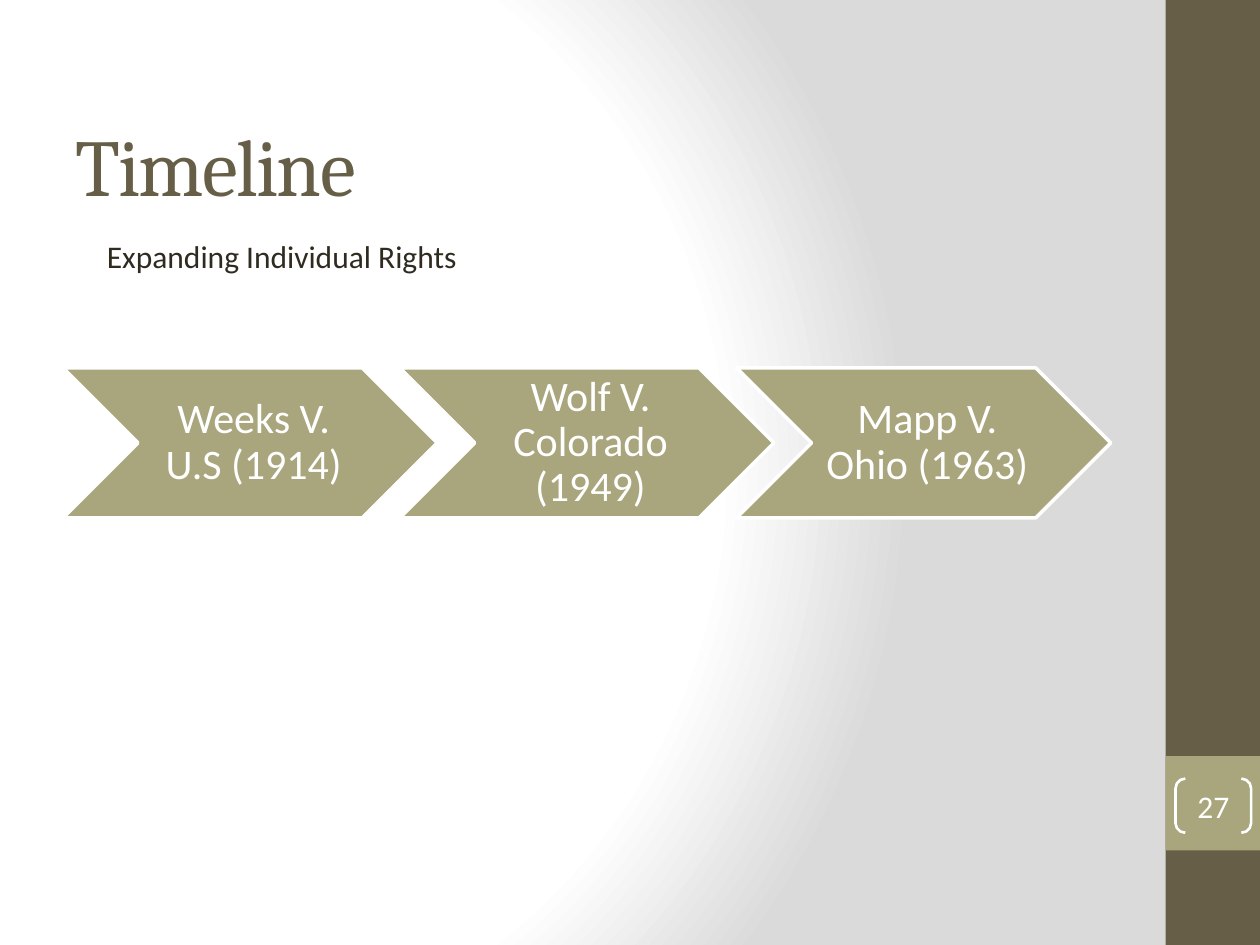
from dataclasses import dataclass

from pptx import Presentation
from pptx.dml.color import RGBColor
from pptx.enum.shapes import MSO_SHAPE
from pptx.enum.text import MSO_ANCHOR, PP_ALIGN
from pptx.oxml import parse_xml
from pptx.oxml.ns import nsdecls
from pptx.util import Inches, Pt

COLS, ROWS = 40, 30
WIDTH, HEIGHT = Inches(10), Inches(7.5)
BROWN, OLIVE, INK, WHITE = "675E47", "A9A57C", "2F2B20", "FFFFFF"


@dataclass
class Box:
    """Place on the slide, in columns and rows of the grid."""
    col: float
    row: float
    cols: float
    rows: float

    def emu(self) -> tuple[int, ...]:
        return (round(self.col * WIDTH / COLS), round(self.row * HEIGHT / ROWS),
                round(self.cols * WIDTH / COLS), round(self.rows * HEIGHT / ROWS))


@dataclass
class Style:
    size: float
    color: str
    font: str = "Calibri"
    align: PP_ALIGN = PP_ALIGN.LEFT
    line_spacing: float = 1.0
    insets: tuple[float, ...] = (0.1, 0.05, 0.1, 0.05)


def rgb(color: str) -> RGBColor:
    return RGBColor.from_string(color)


def set_background(s) -> None:
    stops = "".join(f'<a:gs pos="{pos}000"><a:srgbClr val="{color}"/></a:gs>'
                    for pos, color in ((0, WHITE), (75, WHITE), (100, "DADADA")))
    s.element.cSld.insert(0, parse_xml(
        f'<p:bg {nsdecls("p", "a")}><p:bgPr><a:gradFill rotWithShape="1">'
        f'<a:gsLst>{stops}</a:gsLst><a:path path="circle">'
        '<a:fillToRect l="20000" t="50000" r="100000" b="50000"/></a:path>'
        '</a:gradFill><a:effectLst/></p:bgPr></p:bg>'))


def add_shape(s, kind: MSO_SHAPE, box: Box, fill: str = "", line_width: float = 0):
    sp = s.shapes.add_shape(kind, *box.emu())
    sp.shadow.inherit = False
    if fill:
        sp.fill.solid()
        sp.fill.fore_color.rgb = rgb(fill)
    else:
        sp.fill.background()
    if line_width:
        sp.line.color.rgb = rgb(WHITE)
        sp.line.width = Pt(line_width)
    else:
        sp.line.fill.background()
    return sp


def write(sp, text: str, style: Style):
    tf = sp.text_frame
    tf.word_wrap = True
    tf.vertical_anchor = MSO_ANCHOR.MIDDLE
    tf.margin_left, tf.margin_top, tf.margin_right, tf.margin_bottom = map(
        Inches, style.insets)
    p = tf.paragraphs[0]
    p.alignment = style.align
    p.line_spacing = style.line_spacing
    r = p.add_run()
    r.text = text
    r.font.name = style.font
    r.font.size = Pt(style.size)
    r.font.color.rgb = rgb(style.color)
    return r


def add_text(s, box: Box, text: str, style: Style):
    return write(s.shapes.add_textbox(*box.emu()), text, style)


def add_timeline(s, first: Box, cases: tuple[str, ...]) -> None:
    """Draw one chevron per case, each overlapping a tenth of the one before."""
    style = Style(24, WHITE, align=PP_ALIGN.CENTER, line_spacing=0.9,
                  insets=(0.1, 0.04, 0.04, 0.04))
    for i, case in enumerate(cases):
        box = Box(first.col + i * 0.9 * first.cols, first.row, first.cols, first.rows)
        write(add_shape(s, MSO_SHAPE.CHEVRON, box, OLIVE, 2), case, style)


def add_page_number(s, number: str) -> None:
    sp = add_shape(s, MSO_SHAPE.DOUBLE_BRACKET, Box(37.32, 24.72, 2.4, 1.72),
                   line_width=1.5)
    sp.adjustments[0] = 0.18
    write(sp, number, Style(18, WHITE, align=PP_ALIGN.CENTER, insets=(0, 0, 0, 0)))


def main() -> None:
    prs = Presentation()
    prs.slide_width, prs.slide_height = WIDTH, HEIGHT
    s = prs.slides.add_slide(prs.slide_layouts[6])
    set_background(s)
    add_shape(s, MSO_SHAPE.RECTANGLE, Box(37, 0, 3, ROWS), BROWN)
    add_shape(s, MSO_SHAPE.RECTANGLE, Box(37, 24, 3, 3), OLIVE)

    title = add_text(s, Box(2, 3.7, 33.32, 3), "Timeline",
                     Style(46, BROWN, "Cambria", insets=(0.1, 0, 0.1, 0)))
    title.font._element.set("spc", "-100")
    add_timeline(s, Box(2, 11.68, 11.88, 4.76),
                 ("Weeks V. U.S (1914)", "Wolf V. Colorado (1949)", "Mapp V. Ohio (1963)"))
    add_page_number(s, "27")
    add_text(s, Box(3, 7.32, 13.32, 1.6), "Expanding Individual Rights", Style(18, INK))
    prs.save("out.pptx")


if __name__ == "__main__":
    main()
